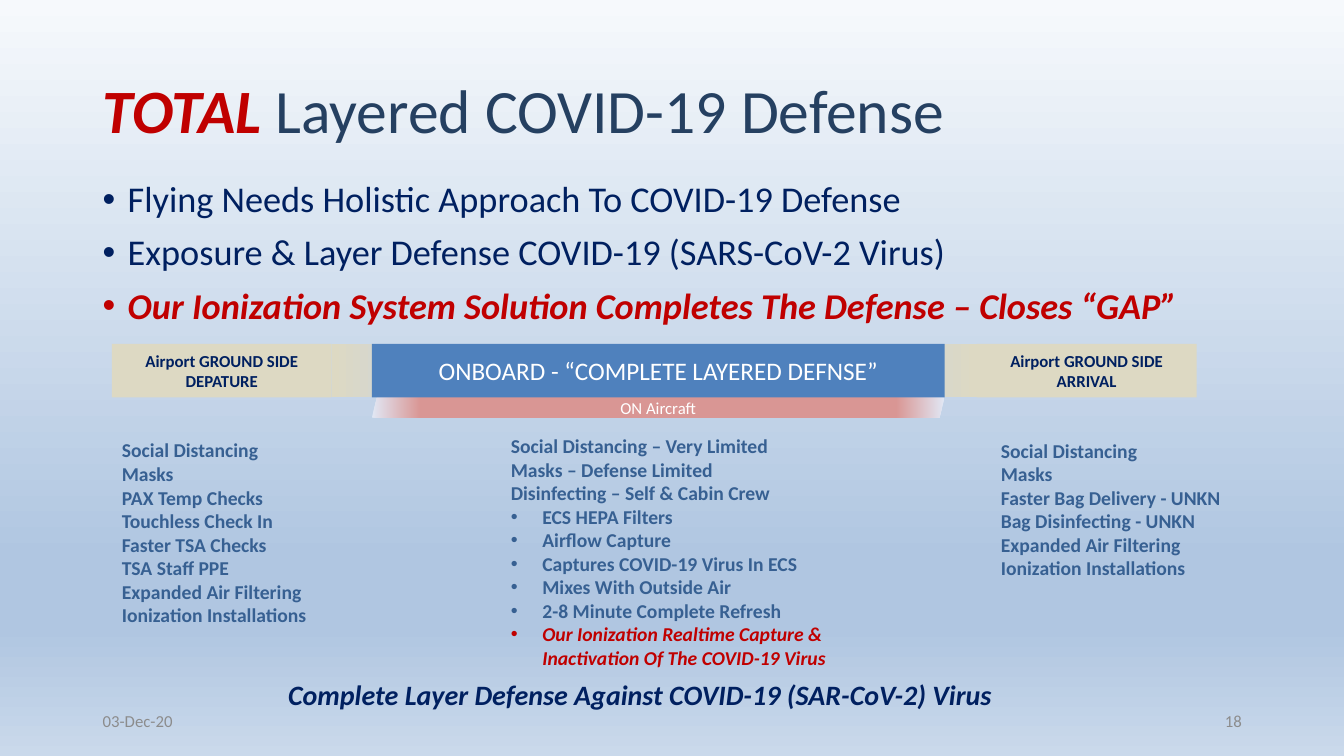
from dataclasses import dataclass
from typing import Optional

from lxml.etree import SubElement
from pptx import Presentation
from pptx.dml.color import RGBColor
from pptx.enum.shapes import MSO_SHAPE
from pptx.enum.text import MSO_ANCHOR, PP_ALIGN
from pptx.oxml.ns import qn
from pptx.util import Pt

COLORS = {
    "navy": "002060", "title": "254061", "red": "C00000", "steel": "376092",
    "white": "FFFFFF", "gray": "8C8C8C", "sand": "DDD9C3", "blue": "4F81BD",
    "haze": "C2D1ED", "rose": "D99694", "mist": "E1E8F5",
    "sky_top": "F6F9FC", "sky_middle": "B0C6E1", "sky_bottom": "CAD9EB",
}


@dataclass
class Box:
    left: float
    top: float
    width: float
    height: float

    def lengths(self) -> tuple:
        return Pt(self.left), Pt(self.top), Pt(self.width), Pt(self.height)


@dataclass
class Line:
    text: str
    bullet: bool = False
    accent: bool = False


@dataclass
class TextBlock:
    box: Box
    lines: list
    size: float
    color: str
    bold: bool = False
    italic: bool = False
    align: PP_ALIGN = PP_ALIGN.LEFT
    anchor: MSO_ANCHOR = MSO_ANCHOR.TOP
    wrap: bool = True
    indent: float = 0
    line_spacing: float = 1.0
    gap: float = 0


@dataclass
class Band:
    box: Box
    stops: list
    text: str = ""
    size: float = 12
    color: str = "white"
    bold: bool = False
    preset: MSO_SHAPE = MSO_SHAPE.RECTANGLE
    radial: bool = False


def add_run(paragraph, text: str, *, size: float, color: str,
            bold: bool = False, italic: bool = False) -> None:
    run = paragraph.add_run()
    run.text = text
    run.font.name = "Calibri"
    run.font.size = Pt(size)
    run.font.bold = bold
    run.font.italic = italic
    run.font.color.rgb = RGBColor.from_string(COLORS[color])


def add_bullet(paragraph, indent: float, color: str) -> None:
    properties = paragraph._p.get_or_add_pPr()
    properties.set("marL", str(Pt(indent)))
    properties.set("indent", str(-Pt(indent)))
    bullet_color = SubElement(properties, qn("a:buClr"))
    SubElement(bullet_color, qn("a:srgbClr"), val=COLORS[color])
    SubElement(properties, qn("a:buFont"), typeface="Arial")
    SubElement(properties, qn("a:buChar"), char="•")


def set_gradient(fill, element, stops: list, angle: Optional[int]) -> None:
    fill.gradient()
    gradient = element.xpath(".//a:gradFill")[0]
    for child in list(gradient):
        gradient.remove(child)
    stop_list = SubElement(gradient, qn("a:gsLst"))
    for position, color in stops:
        stop = SubElement(stop_list, qn("a:gs"), pos=str(position * 1000))
        SubElement(stop, qn("a:srgbClr"), val=COLORS[color])
    if angle is None:
        path = SubElement(gradient, qn("a:path"), path="circle")
        SubElement(path, qn("a:fillToRect"), l="50000", t="50000", r="50000", b="50000")
    else:
        SubElement(gradient, qn("a:lin"), ang=str(angle * 60000), scaled="0")


def add_text_block(slide, block: TextBlock) -> None:
    frame = slide.shapes.add_textbox(*block.box.lengths()).text_frame
    frame.word_wrap = block.wrap
    frame.vertical_anchor = block.anchor
    for index, line in enumerate(block.lines):
        paragraph = frame.add_paragraph() if index else frame.paragraphs[0]
        color = "red" if line.accent else block.color
        paragraph.alignment = block.align
        paragraph.line_spacing = block.line_spacing
        paragraph.space_before = Pt(block.gap if index else 0)
        if line.bullet:
            add_bullet(paragraph, block.indent, color)
        add_run(paragraph, line.text, size=block.size, color=color,
                bold=block.bold or line.accent, italic=block.italic or line.accent)


def add_band(slide, band: Band) -> None:
    shape = slide.shapes.add_shape(band.preset, *band.box.lengths())
    shape.shadow.inherit = False
    shape.line.fill.background()
    if len(band.stops) == 1:
        shape.fill.solid()
        shape.fill.fore_color.rgb = RGBColor.from_string(COLORS[band.stops[0][1]])
    else:
        set_gradient(shape.fill, shape._element, band.stops, None if band.radial else 0)
    if band.text:
        shape.text_frame.vertical_anchor = MSO_ANCHOR.MIDDLE
        paragraph = shape.text_frame.paragraphs[0]
        paragraph.alignment = PP_ALIGN.CENTER
        add_run(paragraph, band.text, size=band.size, color=band.color, bold=band.bold)


def set_title(slide) -> None:
    title = slide.shapes.title
    title.left, title.top, title.width, title.height = Box(66.2, 28.8, 828, 104.4).lengths()
    title.text_frame.vertical_anchor = MSO_ANCHOR.MIDDLE
    paragraph = title.text_frame.paragraphs[0]
    paragraph.alignment = PP_ALIGN.LEFT
    paragraph.line_spacing = 0.9
    add_run(paragraph, "TOTAL", size=44, color="red", bold=True, italic=True)
    add_run(paragraph, " Layered COVID-19 Defense", size=44, color="title")


BAND_TOP, BAND_HEIGHT = 245.7, 38.2
GROUND_WIDTH, FADE_WIDTH = 157, 154
ONBOARD_LEFT, ONBOARD_WIDTH = 265.7, 409
DEPARTURE_LEFT, ARRIVAL_LEFT = 79.9, 697.7

BANDS = [
    Band(Box(DEPARTURE_LEFT, BAND_TOP, GROUND_WIDTH, BAND_HEIGHT), [(0, "sand")],
         "Airport GROUND SIDE DEPATURE", color="navy", bold=True),
    Band(Box(DEPARTURE_LEFT + GROUND_WIDTH, BAND_TOP, FADE_WIDTH, BAND_HEIGHT),
         [(0, "sand"), (70, "haze"), (100, "blue")]),
    Band(Box(ARRIVAL_LEFT - FADE_WIDTH, BAND_TOP, FADE_WIDTH, BAND_HEIGHT),
         [(0, "blue"), (24, "haze"), (100, "sand")]),
    Band(Box(ARRIVAL_LEFT, BAND_TOP, GROUND_WIDTH, BAND_HEIGHT), [(0, "sand")],
         "Airport GROUND SIDE ARRIVAL", color="navy", bold=True),
    Band(Box(ONBOARD_LEFT, BAND_TOP + BAND_HEIGHT, ONBOARD_WIDTH, 14.4),
         [(0, "rose"), (83, "rose"), (100, "mist")], "ON Aircraft",
         preset=MSO_SHAPE.PARALLELOGRAM, radial=True),
    Band(Box(ONBOARD_LEFT, BAND_TOP, ONBOARD_WIDTH, BAND_HEIGHT), [(0, "blue")],
         "ONBOARD - “COMPLETE LAYERED DEFNSE”", size=18),
]

TEXT_BLOCKS = [
    TextBlock(Box(66.2, 126, 828, 120), [
        Line("Flying Needs Holistic Approach To COVID-19 Defense", bullet=True),
        Line("Exposure & Layer Defense COVID-19 (SARS-CoV-2 Virus)", bullet=True),
        Line("Our Ionization System Solution Completes The Defense – Closes “GAP”",
             bullet=True, accent=True),
    ], 25.9, "navy", indent=18, line_spacing=0.9, gap=10),
    TextBlock(Box(79.9, 309.6, 147.6, 160), [Line(text) for text in (
        "Social Distancing", "Masks", "PAX Temp Checks", "Touchless Check In",
        "Faster TSA Checks", "TSA Staff PPE", "Expanded Air Filtering",
        "Ionization Installations")], 14, "steel", bold=True, wrap=False),
    TextBlock(Box(707.8, 309.6, 172.8, 126), [Line(text) for text in (
        "Social Distancing", "Masks", "Faster Bag Delivery - UNKN",
        "Bag Disinfecting - UNKN", "Expanded Air Filtering",
        "Ionization Installations")], 14, "steel", bold=True, wrap=False),
    TextBlock(Box(357.8, 306.4, 242, 211), [
        *(Line(text) for text in (
            "Social Distancing – Very Limited", "Masks – Defense Limited",
            "Disinfecting – Self & Cabin Crew")),
        *(Line(text, bullet=True) for text in (
            "ECS HEPA Filters", "Airflow Capture", "Captures COVID-19 Virus In ECS",
            "Mixes With Outside Air", "2-8 Minute Complete Refresh")),
        Line("Our Ionization Realtime Capture & Inactivation Of The COVID-19 Virus",
             bullet=True, accent=True),
    ], 14, "steel", bold=True, indent=22.5),
    TextBlock(Box(198.7, 480.2, 536.4, 31.7),
              [Line("Complete Layer Defense Against COVID-19 (SAR-CoV-2) Virus")],
              20, "navy", bold=True, italic=True, wrap=False),
    TextBlock(Box(66.2, 500.4, 216, 28.8), [Line("03-Dec-20")], 12, "gray",
              anchor=MSO_ANCHOR.MIDDLE),
    TextBlock(Box(678.2, 500.4, 216, 28.8), [Line("18")], 12, "gray",
              align=PP_ALIGN.RIGHT, anchor=MSO_ANCHOR.MIDDLE),
]


def main() -> None:
    presentation = Presentation()
    presentation.slide_width, presentation.slide_height = Pt(960), Pt(540)
    slide = presentation.slides.add_slide(presentation.slide_layouts[5])
    set_gradient(slide.background.fill, slide._element, [
        (0, "sky_top"), (74, "sky_middle"), (83, "sky_middle"), (100, "sky_bottom")], 90)
    set_title(slide)
    for band in BANDS:
        add_band(slide, band)
    for block in TEXT_BLOCKS:
        add_text_block(slide, block)
    presentation.save("out.pptx")


if __name__ == "__main__":
    main()
